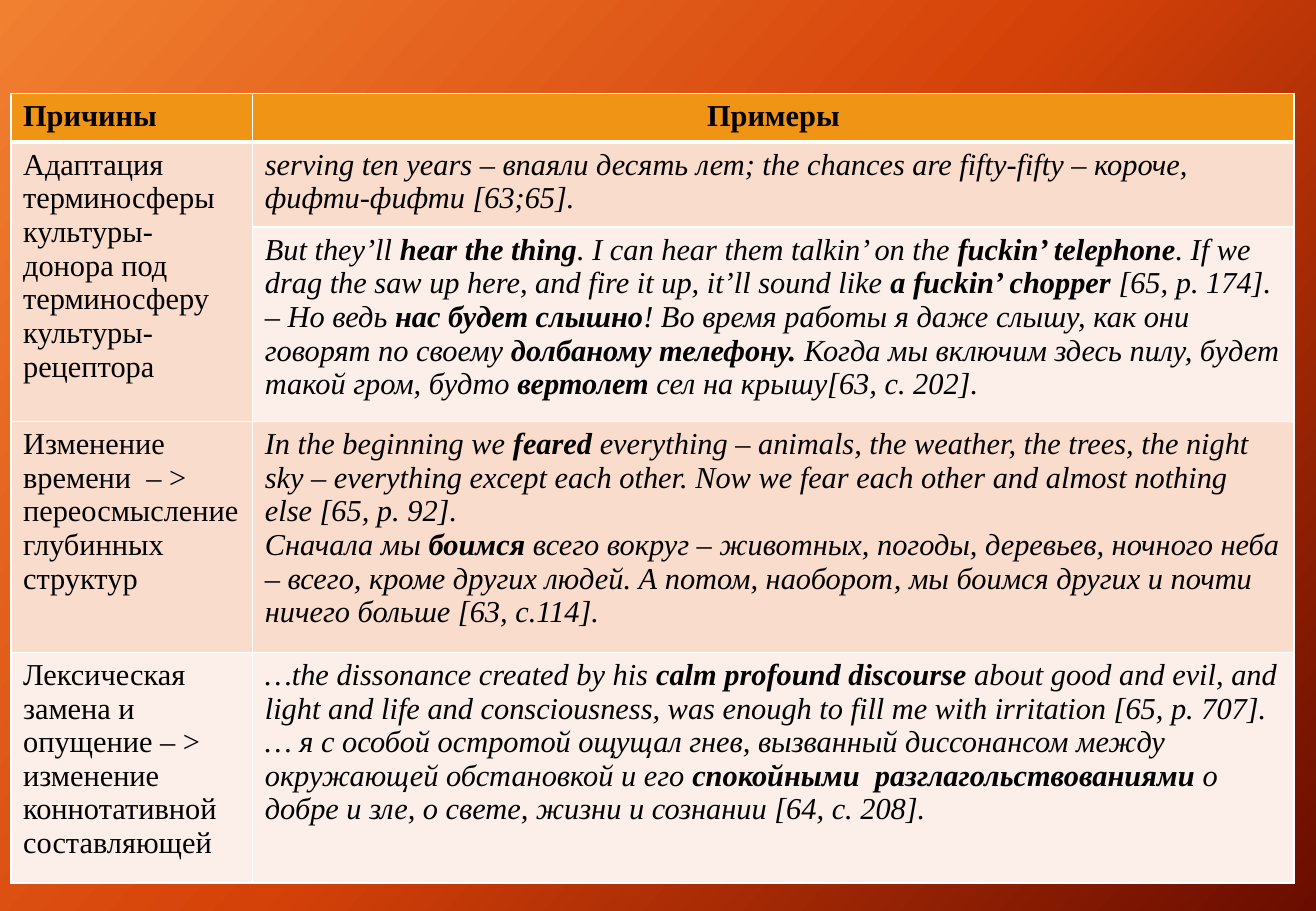
import copy
import pptx
import pptx.util
import pptx.dml.color
import pptx.enum.text
import pptx.oxml.ns
import lxml.etree

Inches, Pt = pptx.util.Inches, pptx.util.Pt
qn = pptx.oxml.ns.qn
COLORS = {
    "light": "F18031", "middle": "D54209", "dark": "6A0D00",
    "header": "F09415", "band": "F9DCCC", "pale": "FCEEE8",
    "border": "FFFFFF", "text": "000000",
}
COLS = [1.99, 8.57]
ROWS = [0.4, 0.7, 1.6, 1.9, 1.9]
FILLS = [("header", "header"), ("band", "band"), ("band", "pale"),
         ("band", "band"), ("pale", "pale")]

# Paragraphs are separated by line ends, bold parts stand between ** marks
CELLS = [
    ("**Причины**", "**Примеры**"),
    ("Адаптация терминосферы культуры-донора под терминосферу культуры-рецептора",
     "serving ten years – впаяли десять лет; the chances are fifty-fifty – короче, "
     "фифти-фифти [63;65]."),
    (None,
     "But they’ll **hear the thing**. I can hear them talkin’ on the "
     "**fuckin’ telephone**. If we drag the saw up here, and fire it up, it’ll sound "
     "like **a fuckin’ chopper **[65, p. 174].\n"
     "– Но ведь **нас будет слышно**! Во время работы я даже слышу, как они говорят "
     "по своему **долбаному телефону.** Когда мы включим здесь пилу, будет такой "
     "гром, будто **вертолет** сел на крышу[63, с. 202]."),
    ("Изменение времени  – > переосмысление глубинных структур",
     "In the beginning we **feared** everything – animals, the weather, the trees, "
     "the night sky – everything except each other. Now we fear each other and "
     "almost nothing else [65, p. 92].\n"
     "Сначала мы **боимся** всего вокруг – животных, погоды, деревьев, ночного неба "
     "– всего, кроме других людей. А потом, наоборот, мы боимся других и почти "
     "ничего больше [63, c.114]."),
    ("Лексическая замена и опущение – > изменение коннотативной составляющей",
     "…the dissonance created by his **calm profound discourse** about good and "
     "evil, and light and life and consciousness, was enough to fill me with "
     "irritation [65, p. 707].\n"
     "… я с особой остротой ощущал гнев, вызванный диссонансом между окружающей "
     "обстановкой и его **спокойными  разглагольствованиями** о добре и зле, "
     "о свете, жизни и сознании [64, c. 208]."),
]


def rgb(name):
    return pptx.dml.color.RGBColor.from_string(COLORS[name])


def set_borders(cell, widths):
    tc_pr = cell._tc.get_or_add_tcPr()
    for i, (side, width) in enumerate(widths.items()):
        ln = lxml.etree.Element(qn(f"a:ln{side}"), w=str(Pt(width)))
        fill = lxml.etree.SubElement(ln, qn("a:solidFill"))
        lxml.etree.SubElement(fill, qn("a:srgbClr"), val=COLORS["border"])
        tc_pr.insert(i, ln)


prs = pptx.Presentation()
prs.slide_width, prs.slide_height = Inches(10.83), Inches(7.5)
s = prs.slides.add_slide(prs.slide_layouts[6])

# Background gradient with three stops
bg = s.background.fill
bg.gradient()
bg.gradient_angle = 360 - 42
gs_list = next(s._element.iter(qn("a:gsLst")))
gs_list.append(copy.deepcopy(gs_list[0]))
for stop, name, position in zip(bg.gradient_stops, ("light", "middle", "dark"), (0, 0.5, 1)):
    stop.color.rgb = rgb(name)
    stop.position = position

# Table grid
table = s.shapes.add_table(len(ROWS), len(COLS), Inches(0.09), Inches(0.77),
                           Inches(sum(COLS)), Inches(sum(ROWS))).table
table.horz_banding = False
for column, width in zip(table.columns, COLS):
    column.width = Inches(width)
for row, height in zip(table.rows, ROWS):
    row.height = Inches(height)
table.cell(1, 0).merge(table.cell(2, 0))

# Cell fills, borders and text
for r_no, texts in enumerate(CELLS):
    for c_no, text in enumerate(texts):
        cell = table.cell(r_no, c_no)
        cell.fill.solid()
        cell.fill.fore_color.rgb = rgb(FILLS[r_no][c_no])
        set_borders(cell, {"L": 1, "R": 1, "T": 3 if r_no == 1 else 1,
                           "B": 3 if r_no == 0 else 1})
        if text is None:
            continue
        tf = cell.text_frame
        tf.text = text.replace("**", "")
        for p, line in zip(tf.paragraphs, text.split("\n")):
            p.text = ""
            if r_no == 0 and c_no == 1:
                p.alignment = pptx.enum.text.PP_ALIGN.CENTER
            for i, part in enumerate(line.split("**")):
                if not part:
                    continue
                r = p.add_run()
                r.text = part
                r.font.name = "Times New Roman"
                r.font.size = Pt(18)
                r.font.bold = i % 2 == 1
                r.font.italic = r_no > 0 and c_no == 1
                r.font.color.rgb = rgb("text")

prs.save("out.pptx")
